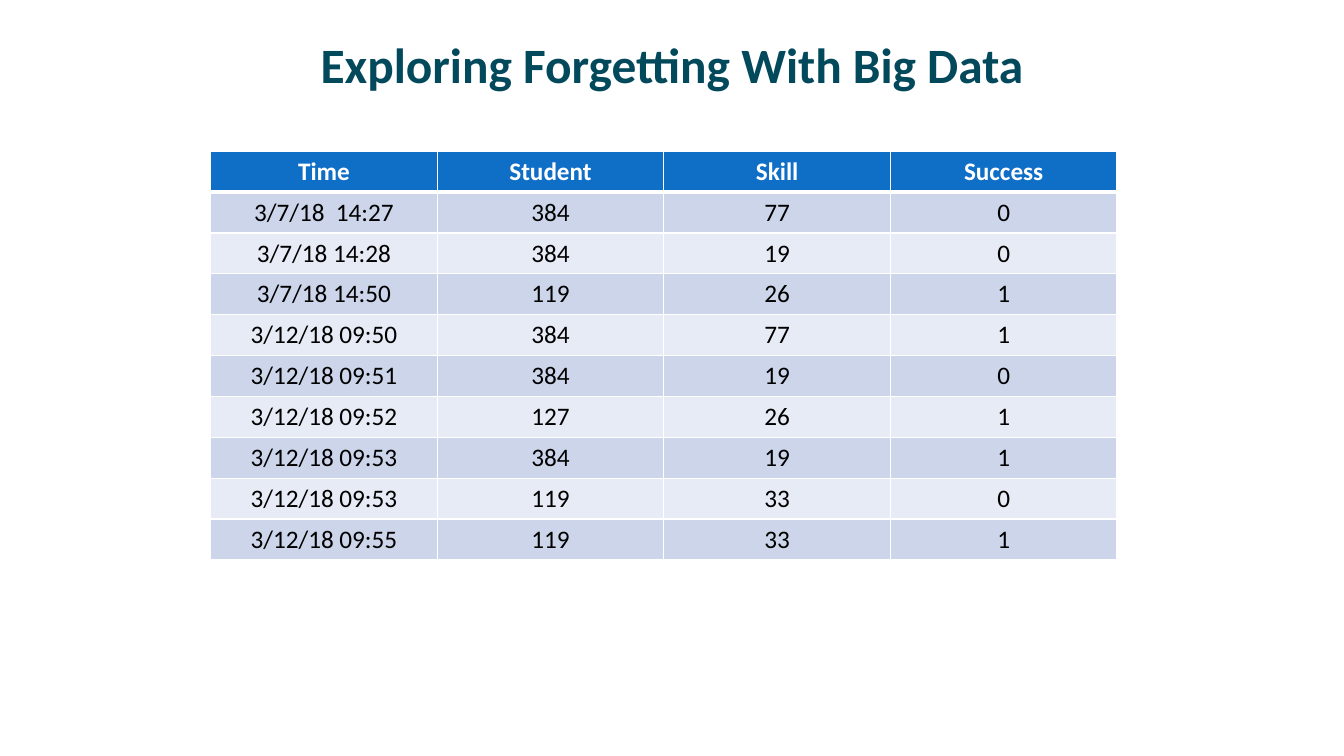
from dataclasses import dataclass

from lxml import etree
from pptx import Presentation
from pptx import util as u
from pptx.dml.color import RGBColor
from pptx.enum import text
from pptx.oxml import ns

FONT = "Calibri"
WHITE = RGBColor(0xFF, 0xFF, 0xFF)
BLACK = RGBColor(0x00, 0x00, 0x00)
TEAL = RGBColor(0x03, 0x49, 0x5C)
BLUE = RGBColor(0x0F, 0x6F, 0xC6)
BAND_DARK = RGBColor(0xCC, 0xD5, 0xEA)
BAND_LIGHT = RGBColor(0xE7, 0xEB, 0xF5)

COLUMN_WIDTH = u.Cm(5.71)
ROW_HEIGHT = u.Cm(1.03)
THIN, THICK = u.Pt(1), u.Pt(3)


@dataclass(frozen=True)
class TextStyle:
    size: float
    color: RGBColor
    bold: bool = False


@dataclass(frozen=True)
class Attempt:
    time: str
    student: int
    skill: int
    success: int

    def values(self) -> list[str]:
        return [self.time, str(self.student), str(self.skill), str(self.success)]


TITLE_STYLE = TextStyle(35.3, TEAL, bold=True)
HEADER_STYLE = TextStyle(18, WHITE, bold=True)
BODY_STYLE = TextStyle(18, BLACK)

HEADINGS = ["Time", "Student", "Skill", "Success"]
ATTEMPTS = [
    Attempt("3/7/18  14:27", 384, 77, 0),
    Attempt("3/7/18 14:28", 384, 19, 0),
    Attempt("3/7/18 14:50", 119, 26, 1),
    Attempt("3/12/18 09:50", 384, 77, 1),
    Attempt("3/12/18 09:51", 384, 19, 0),
    Attempt("3/12/18 09:52", 127, 26, 1),
    Attempt("3/12/18 09:53", 384, 19, 1),
    Attempt("3/12/18 09:53", 119, 33, 0),
    Attempt("3/12/18 09:55", 119, 33, 1),
]


def write_centred(frame, words: str, style: TextStyle) -> None:
    para = frame.paragraphs[0]
    para.alignment = text.PP_ALIGN.CENTER
    span = para.add_run()
    span.text = words
    span.font.name = FONT
    span.font.size = u.Pt(style.size)
    span.font.bold = style.bold
    span.font.color.rgb = style.color


def set_borders(cell, top: int, bottom: int) -> None:
    """Give the cell white borders; they must come before its fill in the XML."""
    properties = cell._tc.get_or_add_tcPr()
    sides = {"lnL": THIN, "lnR": THIN, "lnT": top, "lnB": bottom}
    for index, (side, width) in enumerate(sides.items()):
        line = etree.Element(ns.qn(f"a:{side}"), w=str(int(width)))
        fill = etree.SubElement(line, ns.qn("a:solidFill"))
        etree.SubElement(fill, ns.qn("a:srgbClr"), val=str(WHITE))
        properties.insert(index, line)


def add_title(page, words: str) -> None:
    box = page.shapes.add_textbox(u.Cm(1.7), u.Cm(0.43), u.Cm(30.48), u.Cm(2.34))
    frame = box.text_frame
    frame.word_wrap = True
    frame.vertical_anchor = text.MSO_ANCHOR.MIDDLE
    frame.margin_left = frame.margin_right = u.Cm(0.28)
    frame.margin_top = frame.margin_bottom = u.Cm(0.15)
    write_centred(frame, words, TITLE_STYLE)


def add_attempts_table(page, headings: list[str], attempts: list[Attempt]) -> None:
    rows = [headings] + [attempt.values() for attempt in attempts]
    table = page.shapes.add_table(
        len(rows), len(headings), u.Cm(5.31), u.Cm(3.81),
        COLUMN_WIDTH * len(headings), ROW_HEIGHT * len(rows),
    ).table
    for column in table.columns:
        column.width = COLUMN_WIDTH
    for row_index, values in enumerate(rows):
        table.rows[row_index].height = ROW_HEIGHT
        is_header = row_index == 0
        band = BAND_DARK if row_index % 2 else BAND_LIGHT
        for column_index, value in enumerate(values):
            cell = table.cell(row_index, column_index)
            cell.fill.solid()
            cell.fill.fore_color.rgb = BLUE if is_header else band
            set_borders(
                cell,
                top=THICK if row_index == 1 else THIN,
                bottom=THICK if is_header else THIN,
            )
            write_centred(cell.text_frame, value, HEADER_STYLE if is_header else BODY_STYLE)


def main() -> None:
    deck = Presentation()
    deck.slide_width, deck.slide_height = u.Cm(33.87), u.Cm(19.05)
    page = deck.slides.add_slide(deck.slide_layouts[6])
    add_title(page, "Exploring Forgetting With Big Data")
    add_attempts_table(page, HEADINGS, ATTEMPTS)
    deck.save("out.pptx")


if __name__ == "__main__":
    main()
